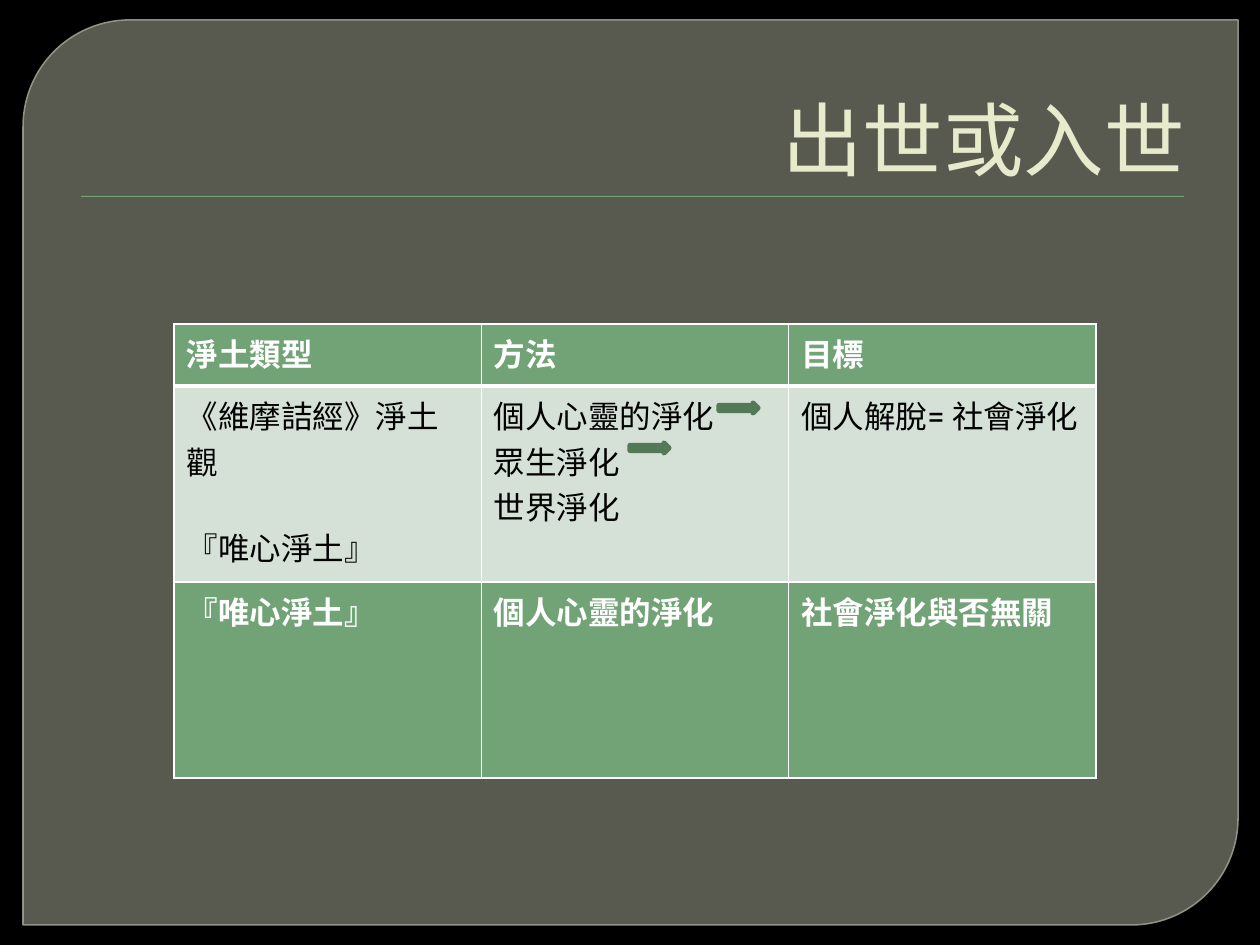
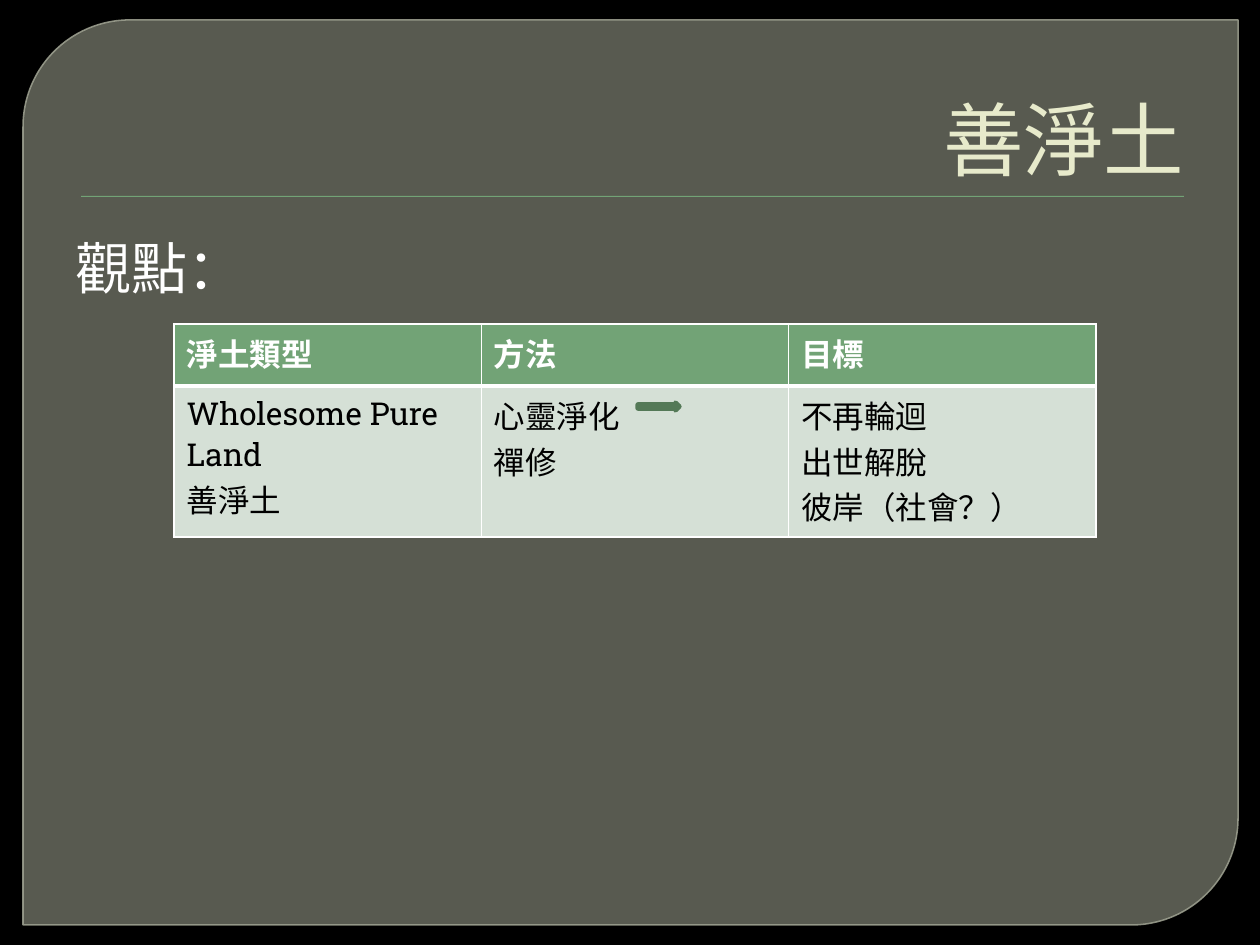
from pptx import Presentation
from pptx.dml.color import RGBColor
from pptx.enum.shapes import MSO_SHAPE
from pptx.enum.text import MSO_ANCHOR, MSO_AUTO_SIZE, PP_ALIGN
from pptx.oxml.ns import qn
from pptx.util import Emu, Pt
from lxml import etree

PANEL, RULE, ARROW = MSO_SHAPE.ROUND_2_DIAG_RECTANGLE, MSO_SHAPE.RECTANGLE, MSO_SHAPE.RIGHT_ARROW
BOTTOM, RIGHT, NO_FIT = MSO_ANCHOR.BOTTOM, PP_ALIGN.RIGHT, MSO_AUTO_SIZE.NONE

# Content: table cells are lists of paragraphs, arrows are (left, top, width, height)
HEADINGS = [["淨土類型"], ["方法"], ["目標"]]
PAGES = [
    {
        "title": "出世或入世",
        "tables": [
            {"top": 324, "heights": [62, 196], "rows": [
                HEADINGS,
                [["《維摩詰經》淨土觀", "『唯心淨土』"],
                 ["個人心靈的淨化", "眾生淨化", "世界淨化"],
                 ["個人解脫= 社會淨化"]],
            ], "gap": 23},
            {"top": 582, "heights": [196], "rows": [
                [["『唯心淨土』"], ["個人心靈的淨化"], ["社會淨化與否無關"]],
            ]},
        ],
        "arrows": [(719, 403, 39, 10), (630, 443, 39, 10)],
    },
    {
        "title": "善淨土",
        "lead": "觀點：",
        "tables": [
            {"top": 324, "heights": [62, 151], "rows": [
                HEADINGS,
                [["Wholesome Pure Land", "善淨土"],
                 ["心靈淨化", "禪修"],
                 ["不再輪迴", "出世解脫", "彼岸（社會？）"]],
            ]},
        ],
        "arrows": [(638, 403, 41, 7)],
    },
]

# Shared style
FONT = "Roboto Slab"
BLACK, WHITE, GREEN, PALE = "000000", "FFFFFF", "72A376", "D5E0D6"
DARK_GREEN, CREAM, STONE, STONE_EDGE = "547957", "E7EACB", "888B7B", "9DA090"
TABLE_LEFT, COLUMN_WIDTH = 174, 307.4
HEADER_LINE, CELL_LINE = 3, 1


def px(length):
    return Emu(round(length * 914400 / 126))


def rgb(code):
    return RGBColor.from_string(code)


def place(shape, left, top, width, height):
    shape.left, shape.top, shape.width, shape.height = map(px, (left, top, width, height))


def style(para, size, colour, bold=False):
    font = para.font
    font.name, font.size, font.bold = FONT, Pt(size), bold
    font.color.rgb = rgb(colour)


def set_alpha(fill_parent, percent):
    colour = fill_parent.find(".//" + qn("a:srgbClr"))
    etree.SubElement(colour, qn("a:alpha"), val=str(percent * 1000))


def add_shape(page, kind, area, fill, line=None, weight=1):
    shape = page.shapes.add_shape(kind, *map(px, area))
    shape.shadow.inherit = False
    shape.fill.solid()
    shape.fill.fore_color.rgb = rgb(fill)
    if line:
        shape.line.color.rgb = rgb(line)
        shape.line.width = Pt(weight)
    else:
        shape.line.fill.background()
    return shape


def furnish_layout(layout, page):
    """Give the layout its background, panel and rule, drawn first on a page."""
    layout.background.fill.solid()
    layout.background.fill.fore_color.rgb = rgb(BLACK)
    panel = add_shape(page, PANEL, (23, 20, 1215, 905), STONE, STONE_EDGE, 0.87)
    panel.adjustments[0], panel.adjustments[1] = 0.118, 0
    properties = panel._element.spPr
    set_alpha(properties.find(qn("a:solidFill")), 65)
    set_alpha(properties.find(qn("a:ln")), 88)
    rule = add_shape(page, RULE, (81, 196, 1103, 1), GREEN)
    for position, shape in enumerate((panel, rule), start=2):
        layout.shapes._spTree.insert(position, shape._element)


def set_title(page, text):
    title = page.shapes.title
    place(title, 63, 35, 1134, 158)
    frame = title.text_frame
    frame.text = text
    frame.auto_size, frame.vertical_anchor = NO_FIT, BOTTOM
    para = frame.paragraphs[0]
    para.alignment = RIGHT
    style(para, 46, CREAM)


def add_lead(page, text):
    box = page.shapes.add_textbox(*map(px, (63, 227, 1134, 624)))
    frame = box.text_frame
    frame.word_wrap = True
    frame.text = text
    style(frame.paragraphs[0], 32, WHITE)


def set_borders(cell, top, bottom):
    properties = cell._tc.get_or_add_tcPr()
    for side, weight in (("L", CELL_LINE), ("R", CELL_LINE), ("T", top), ("B", bottom)):
        line = etree.SubElement(properties, qn("a:ln" + side), w=str(Pt(weight)))
        fill = etree.SubElement(line, qn("a:solidFill"))
        etree.SubElement(fill, qn("a:srgbClr"), val=WHITE)


def add_table(page, top, heights, rows, gap=0):
    columns = len(rows[0])
    area = (TABLE_LEFT, top, COLUMN_WIDTH * columns, sum(heights))
    table = page.shapes.add_table(len(rows), columns, *map(px, area)).table
    for column in table.columns:
        column.width = px(COLUMN_WIDTH)
    for r, (height, row) in enumerate(zip(heights, rows)):
        table.rows[r].height = px(height)
        emphasised = r == 0
        for c, lines in enumerate(row):
            cell = table.cell(r, c)
            set_borders(cell, CELL_LINE if emphasised else HEADER_LINE,
                        HEADER_LINE if emphasised and len(rows) > 1 else CELL_LINE)
            cell.fill.solid()
            cell.fill.fore_color.rgb = rgb(GREEN if emphasised else PALE)
            cell.text_frame.text = "\n".join(lines)
            for para in cell.text_frame.paragraphs:
                style(para, 18, WHITE if emphasised else BLACK, emphasised)
            # The gap parts the first column's two entries
            if gap and c == 0 and len(lines) > 1:
                cell.text_frame.paragraphs[1].space_before = Pt(gap)


def main():
    deck = Presentation()
    deck.slide_width, deck.slide_height = px(1260), px(945)
    layout = deck.slide_layouts[5]
    for number, content in enumerate(PAGES):
        page = deck.slides.add_slide(layout)
        if number == 0:
            furnish_layout(layout, page)
        set_title(page, content["title"])
        if "lead" in content:
            add_lead(page, content["lead"])
        for table in content["tables"]:
            add_table(page, **table)
        for area in content["arrows"]:
            add_shape(page, ARROW, area, GREEN, DARK_GREEN, 3)
    deck.save("out.pptx")


if __name__ == "__main__":
    main()
